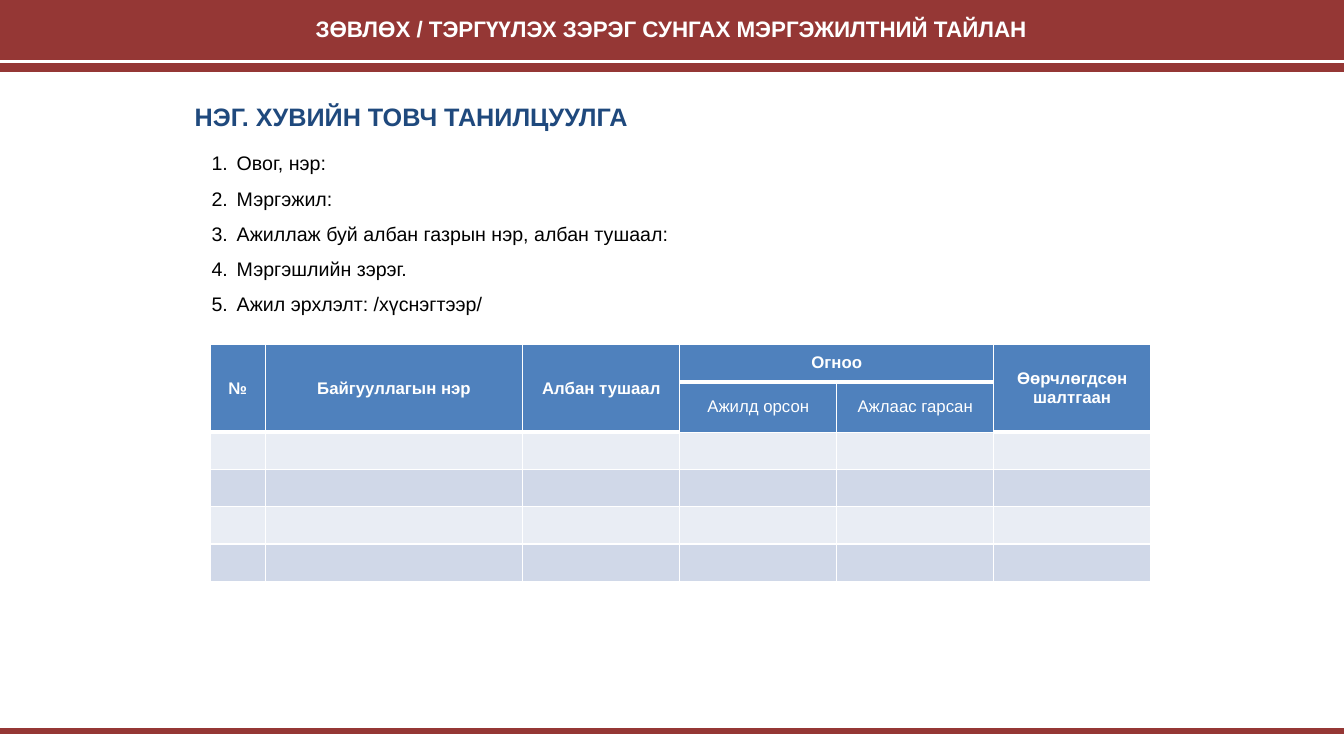
from lxml.etree import SubElement
from pptx import Presentation
from pptx.dml.color import RGBColor
from pptx.enum.shapes import MSO_CONNECTOR as Link, MSO_SHAPE as Shape
from pptx.enum.text import MSO_ANCHOR as Anchor, PP_ALIGN as Align
from pptx.oxml import parse_xml
from pptx.oxml.ns import nsdecls, qn
from pptx.util import Pt

WIDE, HIGH = 960, 540
RED = RGBColor(0x95, 0x37, 0x35)
WHITE = RGBColor(0xFF, 0xFF, 0xFF)
BLACK = RGBColor(0, 0, 0)
NAVY = RGBColor(0x1F, 0x49, 0x7D)
BLUE = RGBColor(0x4F, 0x81, 0xBD)
PALE = RGBColor(0xE9, 0xED, 0xF4)
MIST = RGBColor(0xD0, 0xD8, 0xE8)

FIELDS = ["Овог, нэр:", "Мэргэжил:",
          "Ажиллаж буй албан газрын нэр, албан тушаал:",
          "Мэргэшлийн зэрэг.", "Ажил эрхлэлт: /хүснэгтээр/"]
# Row, column, text, rows spanned, columns spanned
HEADS = [(0, 0, "№", 2, 1), (0, 1, "Байгууллагын нэр", 2, 1),
         (0, 2, "Албан тушаал", 2, 1), (0, 3, "Огноо", 1, 2),
         (0, 5, "Өөрчлөгдсөн шалтгаан", 2, 1),
         (1, 3, "Ажилд орсон", 1, 1), (1, 4, "Ажлаас гарсан", 1, 1)]
TALL = (0, 1, 2, 5)  # columns whose heading spans both header rows


def style(para, size, color, bold=False):
    for run in para.runs:
        font = run.font
        font.name, font.size, font.bold = "Arial", Pt(size), bold
        font.color.rgb = color


def label(slide, box, text, size, color, bold=False, align=Align.LEFT):
    frame = slide.shapes.add_textbox(*map(Pt, box)).text_frame
    frame.word_wrap = True
    frame.text = text
    for para in frame.paragraphs:
        para.alignment = align
        style(para, size, color, bold)
    return frame


def rule(slide, y, color, width):
    """Draw a line across the whole slide."""
    line = slide.shapes.add_connector(Link.STRAIGHT, 0, Pt(y), Pt(WIDE), Pt(y))
    line.line.color.rgb = color
    line.line.width = Pt(width)
    SubElement(line._element.spPr, qn("a:effectLst"))


def banner(slide, x, y, w, h):
    bar = slide.shapes.add_shape(Shape.RECTANGLE, Pt(x), Pt(y), Pt(w), Pt(h))
    bar.shadow.inherit = False
    bar.fill.solid()
    bar.fill.fore_color.rgb = bar.line.color.rgb = RED
    bar.line.width = Pt(2)
    label(slide, (x + 198, y + 7, w - 397, 27),
          "ЗӨВЛӨХ / ТЭРГҮҮЛЭХ ЗЭРЭГ СУНГАХ МЭРГЭЖИЛТНИЙ ТАЙЛАН",
          16, WHITE, True, Align.CENTER)
    rule(slide, y + 44, WHITE, 2.25)


def profile(slide, x, y, w, h):
    """Section heading with its numbered fields."""
    label(slide, (x, y, w - 48, 29), "НЭГ. ХУВИЙН ТОВЧ ТАНИЛЦУУЛГА",
          18, NAVY, True)
    frame = label(slide, (x + 12, y + 27, w - 12, h - 27),
                  "\n".join(FIELDS), 14, BLACK)
    for para in frame.paragraphs:
        para.line_spacing = 1.5
        props = para._p.get_or_add_pPr()
        props.set("marL", str(Pt(18)))
        props.set("indent", str(-Pt(18)))
        SubElement(props, qn("a:buFont"), typeface="+mj-lt")
        SubElement(props, qn("a:buAutoNum"), type="arabicPeriod")


def edges(cell, top, bottom):
    props = cell._tc.get_or_add_tcPr()
    for i, (side, width) in enumerate(zip("LRTB", (1, 1, top, bottom))):
        props.insert(i, parse_xml(
            f'<a:ln{side} {nsdecls("a")} w="{Pt(width)}"><a:solidFill>'
            f'<a:srgbClr val="{WHITE}"/></a:solidFill></a:ln{side}>'))


def history(slide, x, y, w, h):
    """Work record table: two header rows and four empty rows."""
    rows, cols = 6, 6
    table = slide.shapes.add_table(rows, cols, Pt(x), Pt(y), Pt(w), Pt(h)).table
    for col, share in zip(table.columns, (0.55, 2.56, 1.56, 1.56, 1.56, 1.56)):
        col.width = Pt(round(w * share / 9.35, 2))
    for r in range(rows):
        table.rows[r].height = Pt(round(h / rows, 2))
        for c in range(cols):
            cell = table.cell(r, c)
            cell.fill.solid()
            cell.fill.fore_color.rgb = BLUE if r < 2 else (PALE, MIST)[r % 2]
            above = (r == 1 and c not in TALL) or (r == 2 and c in TALL)
            below = r == 0 or (r == 1 and c in TALL)
            edges(cell, 3 if above else 1, 3 if below else 1)
            end = cell.text_frame.paragraphs[0]._p.get_or_add_endParaRPr()
            end.set("sz", "1200")
    for r, c, text, down, across in HEADS:
        cell = table.cell(r, c)
        if down * across > 1:
            cell.merge(table.cell(r + down - 1, c + across - 1))
        cell.text = text
        cell.vertical_anchor = Anchor.MIDDLE
        para = cell.text_frame.paragraphs[0]
        para.alignment = Align.CENTER
        style(para, 12, WHITE, r == 0)


def main():
    deck = Presentation()
    deck.slide_width, deck.slide_height = Pt(WIDE), Pt(HIGH)
    slide = deck.slides.add_slide(deck.slide_layouts[6])
    banner(slide, 0, 0, WIDE, 50.4)
    rule(slide, HIGH - 18, RED, 4.5)
    profile(slide, 132, 69, 684, 158)
    history(slide, 150, 246, 672, 160)
    deck.save("out.pptx")


if __name__ == "__main__":
    main()
